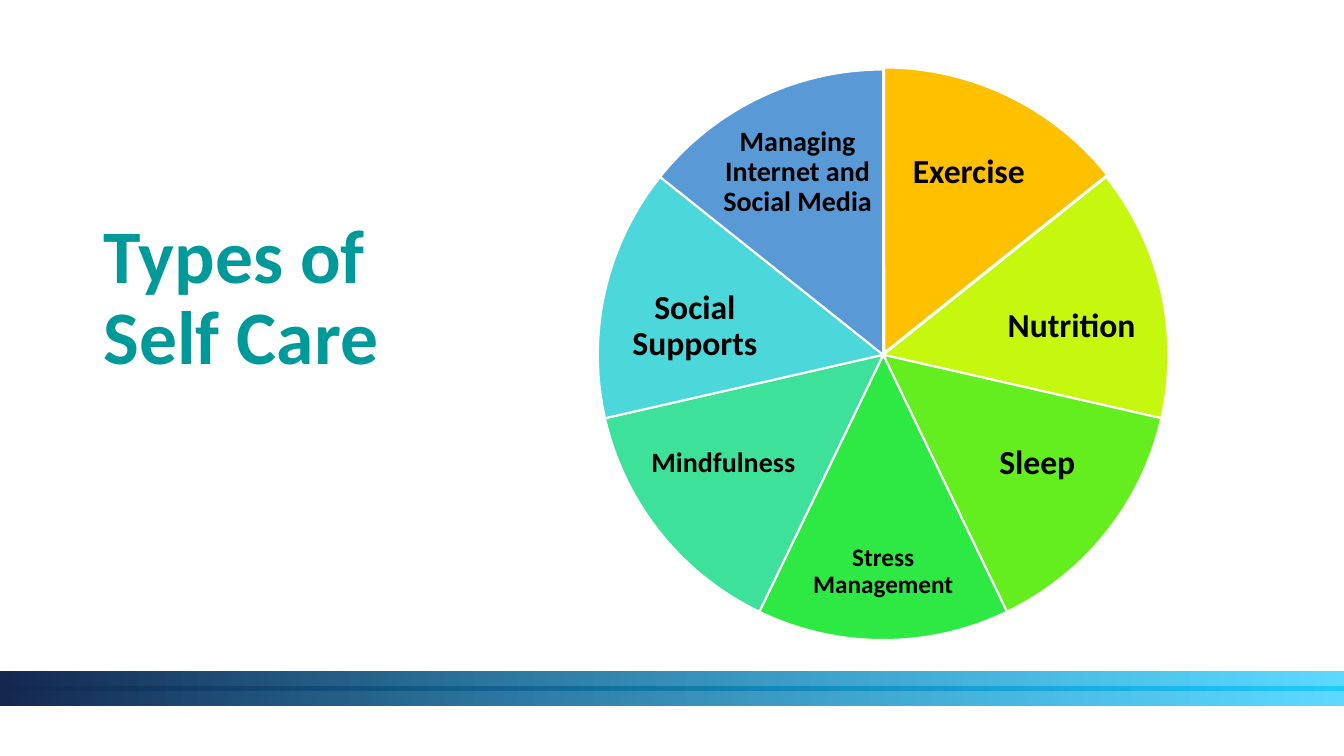
from lxml.etree import SubElement
from pptx import Presentation
from pptx.dml.color import RGBColor
from pptx.enum.shapes import MSO_SHAPE as Shape
from pptx.enum.text import MSO_ANCHOR as Anchor, PP_ALIGN as Align
from pptx.oxml.ns import qn
from pptx.util import Inches, Pt

WIDE, HIGH = 13.33, 7.5
FONT = "Calibri"
WHITE = RGBColor(0xFF, 0xFF, 0xFF)
BLACK = RGBColor(0, 0, 0)
TEAL = RGBColor(0, 0x99, 0x99)
NAVY = RGBColor(0x14, 0x28, 0x50)
SKY = RGBColor(0, 0xC4, 0xFF)
GOLD = RGBColor(0xFF, 0xC0, 0)
LIME = RGBColor(0xC6, 0xF7, 0x0E)
GRASS = RGBColor(0x65, 0xEE, 0x1F)
GREEN = RGBColor(0x2E, 0xE8, 0x44)
MINT = RGBColor(0x3D, 0xE1, 0x99)
AQUA = RGBColor(0x4C, 0xD7, 0xDA)
BLUE = RGBColor(0x59, 0x99, 0xD5)

# Label, fill, text size, then label centre and width as shares of the wheel
CARE = [
    ("Exercise", GOLD, 24, 0.65, 0.18, 0.27),
    ("Nutrition", LIME, 24, 0.83, 0.45, 0.29),
    ("Sleep", GRASS, 24, 0.77, 0.69, 0.26),
    ("Stress Management", GREEN, 18, 0.5, 0.88, 0.27),
    ("Mindfulness", MINT, 20, 0.22, 0.69, 0.33),
    ("Social Supports", AQUA, 24, 0.17, 0.45, 0.29),
    ("Managing Internet and Social Media", BLUE, 20, 0.35, 0.18, 0.28),
]
LABEL_HIGH = 0.18
TURN = 216  # a full circle in pie adjustment units
TOP = 162  # twelve o'clock in the same units


def add_text(slide, box, text, size, color=BLACK, align=Align.CENTER, pad=(0.03, 0.03)):
    frame = slide.shapes.add_textbox(*map(Inches, box)).text_frame
    frame.word_wrap = True
    frame.vertical_anchor = Anchor.MIDDLE
    frame.margin_left = frame.margin_right = Inches(pad[0])
    frame.margin_top = frame.margin_bottom = Inches(pad[1])
    para = frame.paragraphs[0]
    para.alignment = align
    para.line_spacing = 0.9
    run = para.add_run()
    run.text = text
    font = run.font
    font.name, font.size, font.bold = FONT, Pt(size), True
    font.color.rgb = color


def add_form(slide, kind, box):
    form = slide.shapes.add_shape(kind, *map(Inches, box))
    form.shadow.inherit = False
    return form


def add_bands(slide, box):
    """Two overlapping bands that fade to a see-through blue."""
    left, top, wide, high = box
    band = high * 0.56
    for y in (top, top + high - band):
        form = add_form(slide, Shape.RECTANGLE, (left, y, wide, band))
        form.line.fill.background()
        form.fill.gradient()
        form.fill.gradient_angle = 0
        for stop, color in zip(form.fill.gradient_stops, (NAVY, SKY)):
            stop.color.rgb = color
        last = list(form.element.iter(qn("a:srgbClr")))[-1]
        SubElement(last, qn("a:alpha"), val="64000")


def add_wheel(slide, box):
    left, top, size = box
    step = TURN / len(CARE)
    for i, (name, color, points, x, y, wide) in enumerate(CARE):
        dx, dy = (0.01, -0.02) if i == 0 else (0, 0)
        pie = add_form(slide, Shape.PIE, (left + dx, top + dy, size, size))
        pie.adjustments[0] = (TOP + i * step) % TURN
        pie.adjustments[1] = (TOP + (i + 1) * step) % TURN
        pie.fill.solid()
        pie.fill.fore_color.rgb = color
        pie.line.color.rgb = WHITE
        pie.line.width = Pt(1.5)
        spot = (left + (x - wide / 2) * size, top + (y - LABEL_HIGH / 2) * size,
                wide * size, LABEL_HIGH * size)
        add_text(slide, spot, name, points)


def main():
    deck = Presentation()
    deck.slide_width, deck.slide_height = Inches(WIDE), Inches(HIGH)
    slide = deck.slides.add_slide(deck.slide_layouts[6])
    add_bands(slide, (0, 6.66, WIDE, 0.34))
    add_text(slide, (0.93, 0, 3.94, 5.94), "Types of Self Care", 54,
             color=TEAL, align=Align.LEFT, pad=(0.1, 0.05))
    add_wheel(slide, (5.93, 0.69, 5.66))
    deck.save("out.pptx")


if __name__ == "__main__":
    main()
